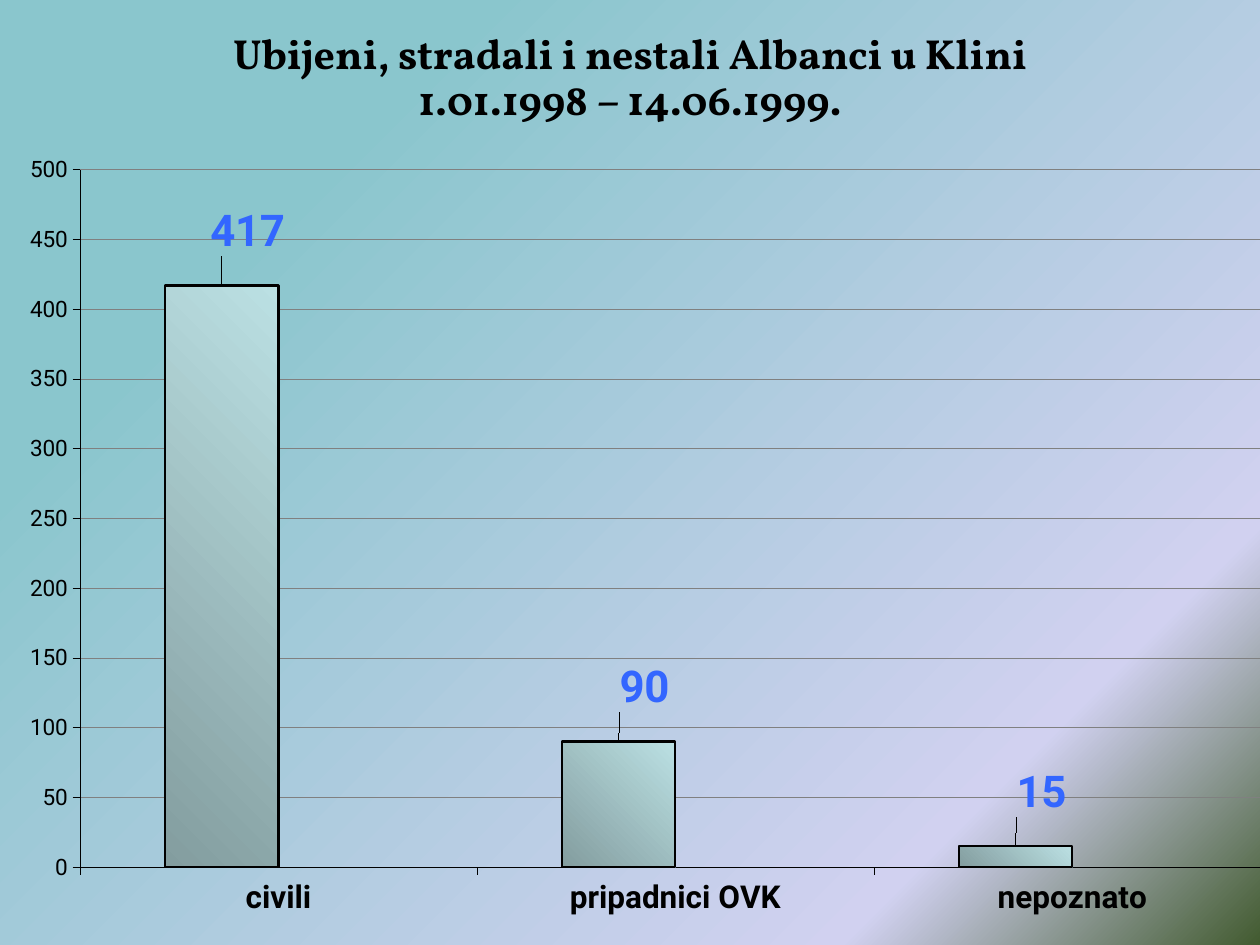
from dataclasses import dataclass
from typing import Any

from lxml import etree
from pptx import Presentation
from pptx.chart.data import CategoryChartData as ChartData
from pptx.dml.color import RGBColor
from pptx.enum.chart import XL_CHART_TYPE as ChartType
from pptx.enum.chart import XL_LABEL_POSITION as LabelPosition
from pptx.enum.chart import XL_TICK_LABEL_POSITION as TickLabels
from pptx.enum.chart import XL_TICK_MARK as TickMark
from pptx.enum.text import MSO_ANCHOR as Anchor
from pptx.enum.text import PP_ALIGN as Align
from pptx.oxml import parse_xml
from pptx.oxml.ns import nsdecls, qn
from pptx.util import Pt

TITLE = ("Ubijeni, stradali i nestali Albanci u Klini", "1.01.1998 – 14.06.1999.")
BLACK, GREY, BLUE, NAVY = "000000", "808080", "3366FF", "333399"
HAIRLINE, OUTLINE = 0.32, 1.29


@dataclass(frozen=True)
class Stop:
    percent: int
    color: str
    opacity: int = 100


@dataclass(frozen=True)
class Bar:
    category: str
    value: int
    label_shift: tuple[float, float]


BARS = (
    Bar("civili", 417, (0.02, -0.03)),
    Bar("pripadnici OVK", 90, (0.02, -0.03)),
    Bar("nepoznato", 15, (0.02, -0.03)),
)
BACKDROP = (Stop(22, "8AC6CD"), Stop(81, "D1D1F0", 91), Stop(100, "425B30"))
BAR_FILL = (Stop(0, "839D9F"), Stop(100, "BBE0E3"))


def rgb(color: str) -> RGBColor:
    return RGBColor.from_string(color)


def apply(target: Any, values: dict[str, Any]) -> None:
    """Set each named attribute of the target."""
    for name, value in values.items():
        setattr(target, name, value)


def style_font(font: Any, name: str, size: float, color: str, bold: bool) -> None:
    apply(font, {"name": name, "size": Pt(size), "bold": bold})
    font.color.rgb = rgb(color)


def style_line(line: Any, color: str, width: float) -> None:
    line.color.rgb = rgb(color)
    line.width = Pt(width)


def paint_gradient(fill: Any, owner: Any, stops: tuple[Stop, ...], angle: int) -> None:
    """Give the fill found inside the owner element these stops, angle clockwise."""
    fill.gradient()
    gradient = owner.find(".//" + qn("a:gradFill"))
    for child in list(gradient):
        gradient.remove(child)
    stop_list = etree.SubElement(gradient, qn("a:gsLst"))
    for stop in stops:
        entry = etree.SubElement(stop_list, qn("a:gs"), pos=str(stop.percent * 1000))
        color = etree.SubElement(entry, qn("a:srgbClr"), val=stop.color)
        if stop.opacity < 100:
            etree.SubElement(color, qn("a:alpha"), val=str(stop.opacity * 1000))
    etree.SubElement(gradient, qn("a:lin"), ang=str(angle * 60000), scaled="0")


def manual_layout(values: dict[str, Any]) -> Any:
    entries = "".join(f'<c:{name} val="{value}"/>' for name, value in values.items())
    return parse_xml(
        f"<c:layout {nsdecls('c')}><c:manualLayout>{entries}</c:manualLayout></c:layout>"
    )


def place_plot(chart: Any) -> None:
    """Fix the inner plot area as fractions of the chart."""
    area = chart.plots[0]._element.getparent()
    for old in area.findall(qn("c:layout")):
        area.remove(old)
    area.insert(0, manual_layout({
        "layoutTarget": "inner", "xMode": "edge", "yMode": "edge",
        "x": 0.062, "y": 0.022, "w": 0.922, "h": 0.88,
    }))


def add_title(page: Any) -> None:
    box = page.shapes.add_textbox(Pt(0), Pt(0), Pt(720), Pt(90))
    frame = box.text_frame
    apply(frame, {"word_wrap": True, "vertical_anchor": Anchor.MIDDLE})
    para = frame.paragraphs[0]
    apply(para, {"alignment": Align.CENTER, "line_spacing": 0.9})
    for index, line in enumerate(TITLE):
        if index:
            para.add_line_break()
        span = para.add_run()
        span.text = line
        style_font(span.font, "Vollkorn", 24, BLACK, True)


def style_axis(axis: Any, size: float, bold: bool) -> None:
    apply(axis, {"major_tick_mark": TickMark.OUTSIDE, "minor_tick_mark": TickMark.NONE})
    style_font(axis.tick_labels.font, "Roboto", size, BLACK, bold)
    style_line(axis.format.line, BLACK, HAIRLINE)


def label_bar(point: Any, bar: Bar) -> None:
    label = point.data_label
    label.position = LabelPosition.OUTSIDE_END
    style_font(label.font, "Roboto", 25, BLUE, True)
    shift_x, shift_y = bar.label_shift
    entry = label._dLbl
    entry.find(qn("c:idx")).addnext(manual_layout({"x": shift_x, "y": shift_y}))


def add_bar_chart(page: Any) -> None:
    data = ChartData()
    data.categories = [bar.category for bar in BARS]
    data.add_series("Series 1", [bar.value for bar in BARS])
    data.add_series("Series 2", [None] * len(BARS))
    chart = page.shapes.add_chart(
        ChartType.COLUMN_CLUSTERED, Pt(0), Pt(87), Pt(738), Pt(453), data
    ).chart
    apply(chart, {"has_title": False, "has_legend": False})
    style_font(chart.font, "Roboto", 23.3, BLACK, True)
    place_plot(chart)
    apply(chart.plots[0], {"gap_width": 150, "overlap": 0, "vary_by_categories": False})

    style_axis(chart.category_axis, 18, True)
    chart.category_axis.tick_label_position = TickLabels.LOW
    values = chart.value_axis
    style_axis(values, 12.9, False)
    apply(values, {"minimum_scale": 0, "maximum_scale": 500, "major_unit": 50,
                   "has_major_gridlines": True})
    style_line(values.major_gridlines.format.line, GREY, HAIRLINE)

    counted, empty = chart.plots[0].series
    for series in (counted, empty):
        series.invert_if_negative = False
        style_line(series.format.line, BLACK, OUTLINE)
    paint_gradient(counted.format.fill, counted._element, BAR_FILL, 315)
    empty.format.fill.solid()
    empty.format.fill.fore_color.rgb = rgb(NAVY)
    for index, bar in enumerate(BARS):
        label_bar(counted.points[index], bar)


def main() -> None:
    deck = Presentation()
    apply(deck, {"slide_width": Pt(720), "slide_height": Pt(540)})
    page = deck.slides.add_slide(deck.slide_layouts[6])
    paint_gradient(page.background.fill, page.element, BACKDROP, 45)
    add_title(page)
    add_bar_chart(page)
    deck.save("out.pptx")


if __name__ == "__main__":
    main()
